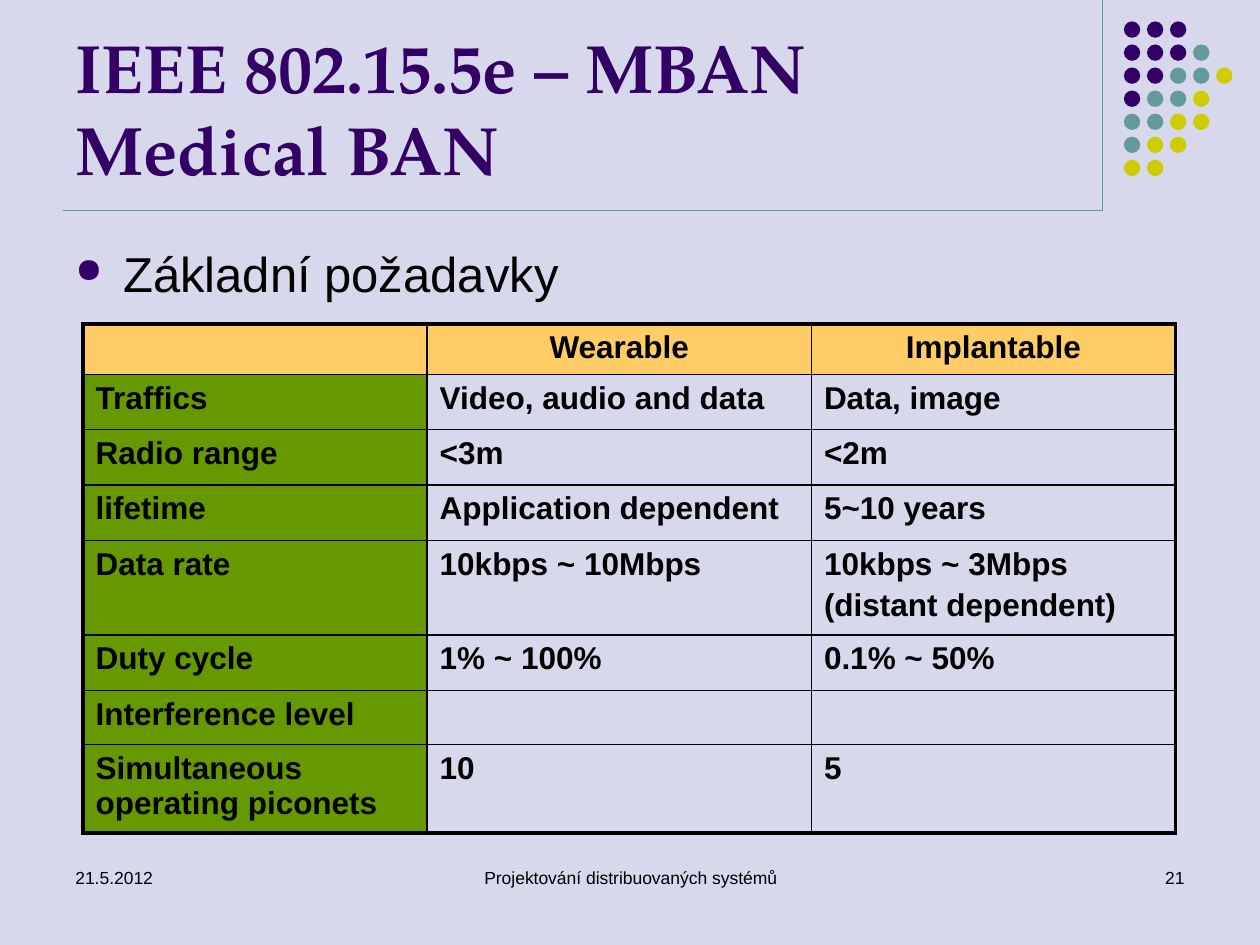
from lxml import etree
from pptx import Presentation, util as u
from pptx.dml.color import RGBColor
from pptx.enum import shapes, text
from pptx.oxml.ns import qn

# Content
TITLE = ["IEEE 802.15.5e – MBAN", "Medical BAN"]
BULLET = "Základní požadavky"
ROWS = [
    ["", "Wearable", "Implantable"],
    ["Traffics", "Video, audio and data", "Data, image"],
    ["Radio range", "<3m", "<2m"],
    ["lifetime", "Application dependent", "5~10 years"],
    ["Data rate", "10kbps ~ 10Mbps", "10kbps ~ 3Mbps\n(distant dependent)"],
    ["Duty cycle", "1% ~ 100%", "0.1% ~ 50%"],
    ["Interference level", "", ""],
    ["Simultaneous operating piconets", "10", "5"],
]
DOTS = ["PPP", "PPPT", "PPTTY", "PTTY", "TTYY", "TYY", "YY"]
LEFT, CENTER, RIGHT = text.PP_ALIGN.LEFT, text.PP_ALIGN.CENTER, text.PP_ALIGN.RIGHT
FOOTERS = [
    ("21.5.2012", 0.5, 2.33, LEFT),
    ("Projektování distribuovaných systémů", 3.42, 3.17, CENTER),
    ("21", 7.17, 2.33, RIGHT),
]

# Theme and grid
THEME = {
    "background": "D8D8EC", "text": "000000", "title": "330066", "rule": "669999",
    "header": "FFCC66", "label": "669900",
    "P": "330066", "T": "669999", "Y": "CCCC00",
    "title_font": "TeX Gyre Pagella", "font": "Arial",
    "title_size": 39, "body_size": 28, "cell_size": 18, "footer_size": 10,
    "outer_border": 2.25, "inner_border": 1,
}
WIDTH, HEIGHT = 10, 7.5
MARGIN = 0.5
RULE_X, RULE_Y = 8.75, 1.67
DOT_X, DOT_Y, DOT_SIZE, DOT_PITCH = 8.92, 0.17, 0.13, 0.183
COLUMN_WIDTHS = [2.73, 3.05, 2.89]
ROW_HEIGHTS = [0.37, 0.44, 0.44, 0.44, 0.67, 0.44, 0.43, 0.62]


def color(name):
    return RGBColor.from_string(THEME[name])


def inches(*lengths):
    return [u.Inches(length) for length in lengths]


def add_run(paragraph, words, size, ink="text", font="font", bold=False):
    run = paragraph.add_run()
    run.text = words
    run.font.size = u.Pt(THEME[size])
    run.font.name = THEME[font]
    run.font.bold = bold
    run.font.color.rgb = color(ink)


def add_text_box(slide, *box):
    frame = slide.shapes.add_textbox(*inches(*box)).text_frame
    frame.word_wrap = True
    return frame


def add_rule(slide, *ends):
    line = slide.shapes.add_connector(shapes.MSO_CONNECTOR.STRAIGHT, *inches(*ends))
    line.line.color.rgb = color("rule")
    line.line.width = u.Pt(0.75)
    etree.SubElement(line._element.spPr, qn("a:effectLst"))


def add_dots(slide):
    for row, letters in enumerate(DOTS):
        for column, letter in enumerate(letters):
            dot = slide.shapes.add_shape(
                shapes.MSO_SHAPE.OVAL,
                *inches(DOT_X + column * DOT_PITCH, DOT_Y + row * DOT_PITCH, DOT_SIZE, DOT_SIZE))
            dot.shadow.inherit = False
            dot.fill.solid()
            dot.fill.fore_color.rgb = color(letter)
            dot.line.fill.background()


def add_bullet(paragraph):
    properties = paragraph._p.get_or_add_pPr()
    indent = u.Inches(0.38)
    properties.set("marL", str(indent))
    properties.set("indent", str(-indent))
    bullet_color = etree.SubElement(properties, qn("a:buClr"))
    etree.SubElement(bullet_color, qn("a:srgbClr"), val=THEME["title"])
    etree.SubElement(properties, qn("a:buSzPct"), val="70000")
    etree.SubElement(properties, qn("a:buChar"), char="●")


def set_borders(cell, outer_sides):
    properties = cell._tc.get_or_add_tcPr()
    for side in "LRTB":
        width = THEME["outer_border" if side in outer_sides else "inner_border"]
        line = etree.SubElement(properties, qn("a:ln" + side), w=str(u.Pt(width)))
        fill = etree.SubElement(line, qn("a:solidFill"))
        etree.SubElement(fill, qn("a:srgbClr"), val=THEME["text"])


def add_requirements(slide):
    table = slide.shapes.add_table(
        len(ROWS), len(COLUMN_WIDTHS),
        *inches(0.66, 2.57, sum(COLUMN_WIDTHS), sum(ROW_HEIGHTS))).table
    table.first_row = table.horz_banding = False
    for column, width in zip(table.columns, COLUMN_WIDTHS):
        column.width = u.Inches(width)
    for row, height in zip(table.rows, ROW_HEIGHTS):
        row.height = u.Inches(height)

    last_row, last_column = len(ROWS) - 1, len(COLUMN_WIDTHS) - 1
    for r, words_in_row in enumerate(ROWS):
        for c, words in enumerate(words_in_row):
            cell = table.cell(r, c)
            edges = {"L": c == 0, "R": c == last_column, "T": r == 0, "B": r == last_row}
            set_borders(cell, [side for side, outer in edges.items() if outer])
            if r == 0 or c == 0:
                cell.fill.solid()
                cell.fill.fore_color.rgb = color("header" if r == 0 else "label")
            else:
                cell.fill.background()
            if not words:
                continue
            for index, line in enumerate(words.split("\n")):
                frame = cell.text_frame
                paragraph = frame.add_paragraph() if index else frame.paragraphs[0]
                paragraph.alignment = CENTER if r == 0 else LEFT
                paragraph.space_before = u.Pt(0.2 * THEME["cell_size"])
                add_run(paragraph, line, "cell_size", bold=True)


def main():
    presentation = Presentation()
    presentation.slide_width, presentation.slide_height = inches(WIDTH, HEIGHT)
    slide = presentation.slides.add_slide(presentation.slide_layouts[6])
    slide.background.fill.solid()
    slide.background.fill.fore_color.rgb = color("background")

    # Corner decoration
    add_rule(slide, RULE_X, 0, RULE_X, RULE_Y)
    add_dots(slide)
    add_rule(slide, MARGIN, RULE_Y, RULE_X, RULE_Y)

    # Title
    frame = add_text_box(slide, MARGIN, 0.13, RULE_X - MARGIN, 1.42)
    frame.vertical_anchor = text.MSO_ANCHOR.BOTTOM
    paragraph = frame.paragraphs[0]
    for index, line in enumerate(TITLE):
        if index:
            paragraph.add_line_break()
        add_run(paragraph, line, "title_size", "title", "title_font", bold=True)

    # Bullet
    paragraph = add_text_box(slide, MARGIN, 1.88, WIDTH - 2 * MARGIN, 0.69).paragraphs[0]
    paragraph.space_before = u.Pt(0.2 * THEME["body_size"])
    add_bullet(paragraph)
    add_run(paragraph, BULLET, "body_size")

    # Footer
    for words, left, width, alignment in FOOTERS:
        paragraph = add_text_box(slide, left, 6.83, width, 0.5).paragraphs[0]
        paragraph.alignment = alignment
        add_run(paragraph, words, "footer_size")

    add_requirements(slide)
    presentation.save("out.pptx")


if __name__ == "__main__":
    main()
